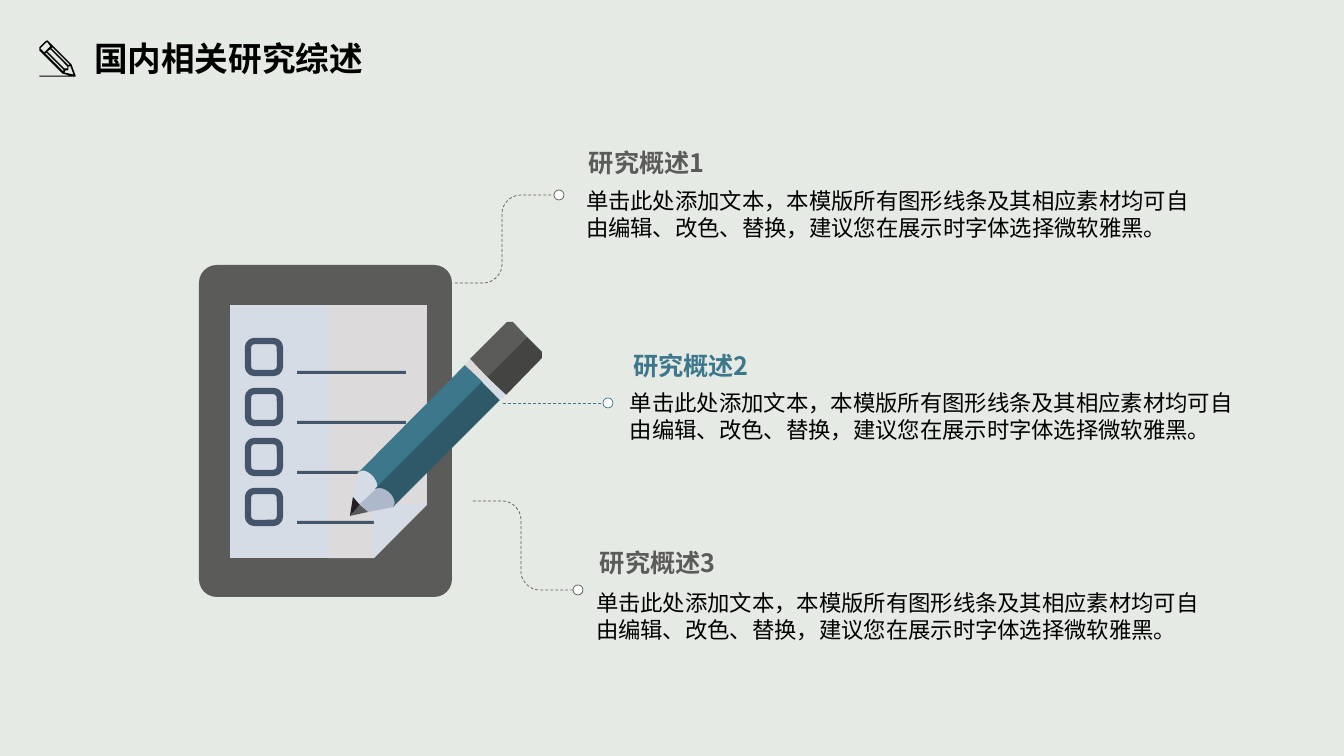
from lxml.etree import SubElement
from pptx import Presentation
from pptx.dml.color import RGBColor
from pptx.enum.dml import MSO_LINE_DASH_STYLE as Dash
from pptx.enum.shapes import MSO_CONNECTOR, MSO_SHAPE as Shape
from pptx.oxml.ns import qn
from pptx.util import Pt

FONT = "Noto Sans CJK SC"
COLORS = {
    "background": "E5EAE4", "gray": "5B5B59", "gray_dark": "444443",
    "paper": "DCDADA", "paper_blue": "D6DCE5", "wood_dark": "ADB9CA",
    "ink": "44546A", "teal": "3C778C", "teal_dark": "2D5969",
    "lead": "231F20", "lead_light": "58595B", "white": "FFFFFF", "black": "000000",
}
HEADING = "国内相关研究综述"
DETAIL = "单击此处添加文本，本模版所有图形线条及其相应素材均可自由编辑、改色、替换，建议您在展示时字体选择微软雅黑。"
TOPICS = [
    ("研究概述1", "gray", (576, 140), (573, 180, 638, 73)),
    ("研究概述2", "teal", (620, 343), (617, 382, 635, 79)),
    ("研究概述3", "gray", (587, 540), (583, 582, 647, 73)),
]
ELBOWS = [(455, 283, 502, 195, 559), (473, 501, 521, 590, 578)]
MARKERS = [((559, 195), "gray"), ((608, 403), "teal"), ((578, 590), "gray")]
STRAIGHT_LEAD = (503, 403, 603, 403)
CHECK_ROWS, ROW_STEP = 4, 50

PAGE = [(329, 305), (427, 305), (427, 505), (374, 558), (329, 558)]
FOLD = [(427, 504), (374, 504), (374, 558)]
PENCIL = [
    ("paper_blue", [(372, 475), (367, 470, 361, 469, 358, 472), (353, 497), (361, 505),
                    (376, 489), (379, 487, 378, 480, 372, 475)]),
    ("wood_dark", [(390, 492), (385, 487, 379, 486, 376, 489), (360, 504), (368, 512),
                   (394, 507), (396, 503, 395, 497, 390, 492)]),
    ("lead", [(353, 497), (350, 516), (360, 505)]),
    ("lead_light", [(360, 505), (350, 516), (368, 512)]),
    ("teal", [(465, 365), (358, 473), (361, 469, 367, 470, 372, 475),
              (377, 480, 379, 487, 376, 489), (483, 382)]),
    ("teal_dark", [(482, 382), (375, 489), (379, 487, 385, 488, 390, 493),
                   (395, 498, 396, 504, 393, 507), (500, 400)]),
    ("gray", [(527, 337), (513, 322), (507, 322), (470, 359), (487, 377)]),
    ("gray_dark", [(506, 395), (542, 358), (542, 352), (527, 337), (487, 377)]),
    ("paper", [(487, 377), (470, 359), (465, 365), (483, 382)]),
    ("paper_blue", [(483, 382), (500, 400), (506, 395), (487, 377)]),
]
HEADING_ICON = [
    [(75, 76), (75, 75), (71, 64), (48, 41), (47, 40), (45, 41), (39, 47), (39, 50),
     (43, 54), (62, 73), (69, 75), (39, 75), (39, 76)],
    [(73, 74), (64, 72), (65, 70), (67, 70), (68, 69), (68, 66), (70, 66)],
    [(52, 47), (69, 64), (68, 65), (51, 48)],
    [(50, 49), (67, 66), (67, 68), (64, 68), (47, 51)],
    [(40, 48), (46, 42), (47, 42), (50, 46), (44, 52)],
    [(46, 52), (63, 69), (63, 71), (45, 53)],
]

PX = 914400 / 100.8
ICON_UNIT = 9144


def px(*lengths):
    return [round(length * PX) for length in lengths]


def rgb(name):
    return RGBColor.from_string(COLORS[name])


def paint(shape, fill=None, line=None, width=0.5, dashed=False):
    shape.shadow.inherit = False
    if fill:
        shape.fill.solid()
        shape.fill.fore_color.rgb = rgb(fill)
    else:
        shape.fill.background()
    if line:
        stroke(shape.line, line, width, dashed)
    else:
        shape.line.fill.background()


def stroke(line, color, width, dashed):
    line.color.rgb = rgb(color)
    line.width = Pt(width)
    if dashed:
        line.dash_style = Dash.DASH


def preset(kind, box, rounding=None, **style):
    shape = slide.shapes.add_shape(kind, *px(*box))
    if rounding is not None:
        shape.adjustments[0] = rounding
    paint(shape, **style)


def flatten(nodes, steps=8):
    points = []
    for node in nodes:
        if len(node) == 2:
            points.append(node)
            continue
        curve = [points[-1], node[:2], node[2:4], node[4:]]
        for step in range(1, steps + 1):
            t = step / steps
            weights = ((1 - t) ** 3, 3 * t * (1 - t) ** 2, 3 * t * t * (1 - t), t ** 3)
            points.append(tuple(sum(w * p[axis] for w, p in zip(weights, curve))
                                for axis in (0, 1)))
    return points


def outline(contours, unit=PX, closed=True, **style):
    paths = [[(round(x * unit), round(y * unit)) for x, y in flatten(nodes)]
             for nodes in contours]
    builder = slide.shapes.build_freeform(*paths[0][0])
    for index, points in enumerate(paths):
        if index:
            builder.move_to(*points[0])
        builder.add_line_segments(points[1:], close=closed)
    paint(builder.convert_to_shape(), **style)


def elbow(x0, y0, bend, y1, x1, radius=18):
    turn = radius if y1 > y0 else -radius
    return [(x0, y0), (bend - radius, y0),
            (bend - radius // 2, y0, bend, y0 + turn // 2, bend, y0 + turn),
            (bend, y1 - turn),
            (bend, y1 - turn // 2, bend + radius // 2, y1, bend + radius, y1), (x1, y1)]


def write(text, box, size, color, bold=False, insets=(13, 7)):
    frame = slide.shapes.add_textbox(*px(*box)).text_frame
    frame.word_wrap = True
    frame.margin_left = frame.margin_right = px(insets[0])[0]
    frame.margin_top = frame.margin_bottom = px(insets[1])[0]
    paragraph = frame.paragraphs[0]
    paragraph.text = text
    font = paragraph.font
    font.size, font.bold, font.name = Pt(size), bold, FONT
    font.color.rgb = rgb(color)
    defaults = paragraph._p.pPr.find(qn("a:defRPr"))
    SubElement(defaults, qn("a:ea")).set("typeface", FONT)


deck = Presentation()
deck.slide_width, deck.slide_height = px(1344, 756)
slide = deck.slides.add_slide(deck.slide_layouts[6])
slide.background.fill.solid()
slide.background.fill.fore_color.rgb = rgb("background")

preset(Shape.ROUNDED_RECTANGLE, (199, 265, 253, 332), rounding=0.07, fill="gray")
outline([PAGE], fill="paper")
preset(Shape.RECTANGLE, (230, 305, 99, 253), fill="paper_blue")
for row in range(CHECK_ROWS):
    shift = row * ROW_STEP
    preset(Shape.ROUNDED_RECTANGLE, (248, 341 + shift, 32, 32), rounding=0.2,
           line="ink", width=4.5)
    preset(Shape.RECTANGLE, (297, 371 + shift, 109, 3), fill="ink")
outline([FOLD], fill="paper_blue")
for color, nodes in PENCIL:
    outline([nodes], fill=color)

for bends in ELBOWS:
    outline([elbow(*bends)], closed=False, line="gray", dashed=True)
lead_line = slide.shapes.add_connector(MSO_CONNECTOR.STRAIGHT, *px(*STRAIGHT_LEAD))
stroke(lead_line.line, "teal", 0.5, True)
SubElement(lead_line._element.spPr, qn("a:effectLst"))
for (x, y), color in MARKERS:
    preset(Shape.OVAL, (x - 5, y - 5, 10, 10), fill="white", line=color)

for title, color, corner, detail_box in TOPICS:
    write(DETAIL, detail_box, 16, "black")
    write(title, (*corner, 149, 42), 18, color, bold=True)
write(HEADING, (84, 33, 296, 50), 24, "black", bold=True, insets=(10, 5))
outline(HEADING_ICON, unit=ICON_UNIT, fill="black")

deck.save("out.pptx")
